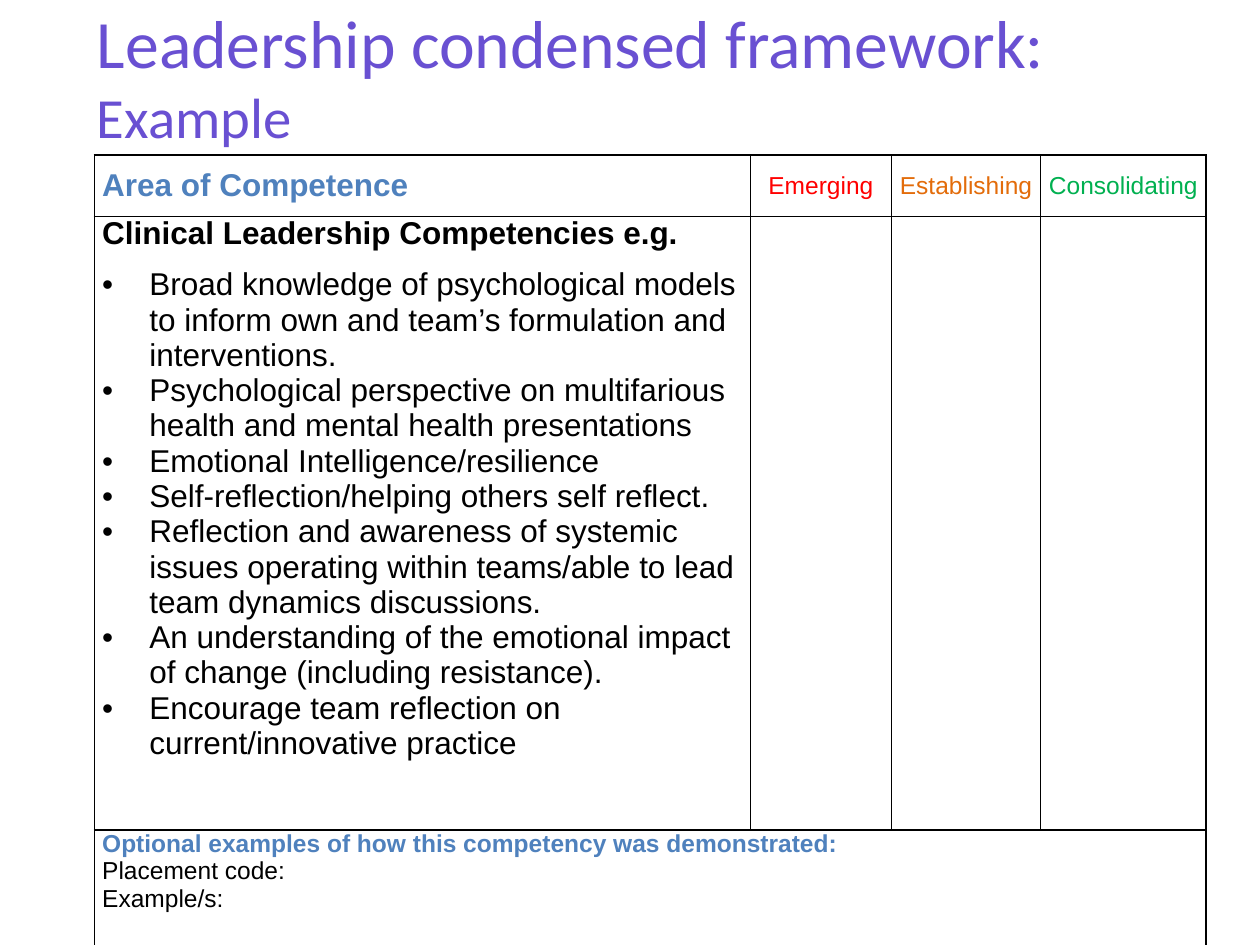
from lxml import etree
from pptx import Presentation
from pptx.dml.color import RGBColor
from pptx.enum.text import MSO_ANCHOR, MSO_AUTO_SIZE, PP_ALIGN
from pptx.oxml.ns import qn
from pptx.util import Cm, Pt

LEFT, CENTER, JUSTIFY = PP_ALIGN.LEFT, PP_ALIGN.CENTER, PP_ALIGN.JUSTIFY
TOP, MIDDLE = MSO_ANCHOR.TOP, MSO_ANCHOR.MIDDLE
NO_AUTOFIT = MSO_AUTO_SIZE.NONE
TITLE_ONLY = 5

COLORS = {
    "title": "6950D2",
    "heading": "4F81BD",
    "text": "000000",
    "border": "000000",
    "emerging": "FF0000",
    "establishing": "E36C0A",
    "consolidating": "00B050",
}
COLUMNS = [13.23, 2.84, 3.01, 3.33]
ROWS = [1.24, 12.37, 3.86]
LEVELS = ["Emerging", "Establishing", "Consolidating"]
COMPETENCIES = [
    "Broad knowledge of psychological models to inform own and team’s formulation and interventions.",
    "Psychological perspective on multifarious health and mental health presentations",
    "Emotional Intelligence/resilience",
    "Self-reflection/helping others self reflect.",
    "Reflection and awareness of systemic issues operating within teams/able to lead team dynamics discussions.",
    "An understanding of the emotional impact of change (including resistance).",
    "Encourage team reflection on current/innovative practice",
]


class FrameworkSlide:
    """Holds the style and the current slide."""

    def __init__(self, prs):
        self.slide = prs.slides.add_slide(prs.slide_layouts[TITLE_ONLY])

    def font(self, font, size, color, name="Arial", bold=False):
        font.name, font.size, font.bold = name, Pt(size), bold
        font.color.rgb = RGBColor.from_string(COLORS[color])

    def title(self, lines, sizes, left, top, width, height):
        sp = self.slide.shapes.title
        sp.left, sp.top, sp.width, sp.height = map(Cm, (left, top, width, height))
        tf = sp.text_frame
        tf.auto_size, tf.vertical_anchor = NO_AUTOFIT, MIDDLE
        p = tf.paragraphs[0]
        p.alignment = LEFT
        for i, (line, size) in enumerate(zip(lines, sizes)):
            if i:
                p.add_line_break()
            r = p.add_run()
            r.text = line
            self.font(r.font, size, "title", "Calibri")

    def table(self, left, top, columns, rows):
        frame = self.slide.shapes.add_table(
            len(rows), len(columns), Cm(left), Cm(top), Cm(sum(columns)), Cm(sum(rows)))
        table = frame.table
        table.first_row = table.horz_banding = False
        for column, width in zip(table.columns, columns):
            column.width = Cm(width)
        for row, height in zip(table.rows, rows):
            row.height = Cm(height)
        for cell in table.iter_cells():
            cell.margin_left = cell.margin_right = Cm(0.16)
            cell.margin_top = cell.margin_bottom = 0
            self.borders(cell)
            cell.fill.background()
        return table

    def borders(self, cell):
        tc_pr = cell._tc.get_or_add_tcPr()
        for side in ("a:lnL", "a:lnR", "a:lnT", "a:lnB"):
            ln = etree.SubElement(tc_pr, qn(side), w=str(Pt(1)))
            fill = etree.SubElement(ln, qn("a:solidFill"))
            etree.SubElement(fill, qn("a:srgbClr"), val=COLORS["border"])

    def paragraph(self, cell, text, size, color="text", bold=False, align=LEFT,
                  after=0, bullet=False):
        tf = cell.text_frame
        p = tf.add_paragraph() if tf.text else tf.paragraphs[0]
        p.text, p.alignment, p.space_after = text, align, Pt(after)
        if bullet:
            p_pr = p._p.get_or_add_pPr()
            p_pr.set("marL", str(Cm(0.95)))
            p_pr.set("indent", str(Cm(-0.95)))
            etree.SubElement(p_pr, qn("a:buFont"), typeface="Arial")
            etree.SubElement(p_pr, qn("a:buChar"), char="•")
        self.font(p.font, size, color, bold=bold)


def main():
    prs = Presentation()
    prs.slide_width, prs.slide_height = Cm(25.4), Cm(19.05)
    s = FrameworkSlide(prs)

    # Title
    s.title(["Leadership condensed framework:", "Example"], [38.7, 32.4],
            1.7, 0.33, 22.81, 2.39)

    # Header row
    table = s.table(1.9, 3.12, COLUMNS, ROWS)
    s.paragraph(table.cell(0, 0), "Area of Competence", 18, "heading", bold=True)
    for col, level in enumerate(LEVELS, 1):
        s.paragraph(table.cell(0, col), level, 14, level.lower(), align=CENTER)
    for col in range(len(COLUMNS)):
        table.cell(0, col).vertical_anchor = MIDDLE

    # Competencies
    cell = table.cell(1, 0)
    cell.vertical_anchor = TOP
    s.paragraph(cell, "Clinical Leadership Competencies e.g.", 18, bold=True, after=9)
    for competency in COMPETENCIES:
        s.paragraph(cell, competency, 18, bullet=True)

    # Examples across the full width
    cell = table.cell(2, 0)
    cell.merge(table.cell(2, len(COLUMNS) - 1))
    s.paragraph(cell, "Optional examples of how this competency was demonstrated:",
                14, "heading", bold=True)
    s.paragraph(cell, "Placement code:", 14, align=JUSTIFY)
    s.paragraph(cell, "Example/s:", 14)

    prs.save("out.pptx")


if __name__ == "__main__":
    main()
